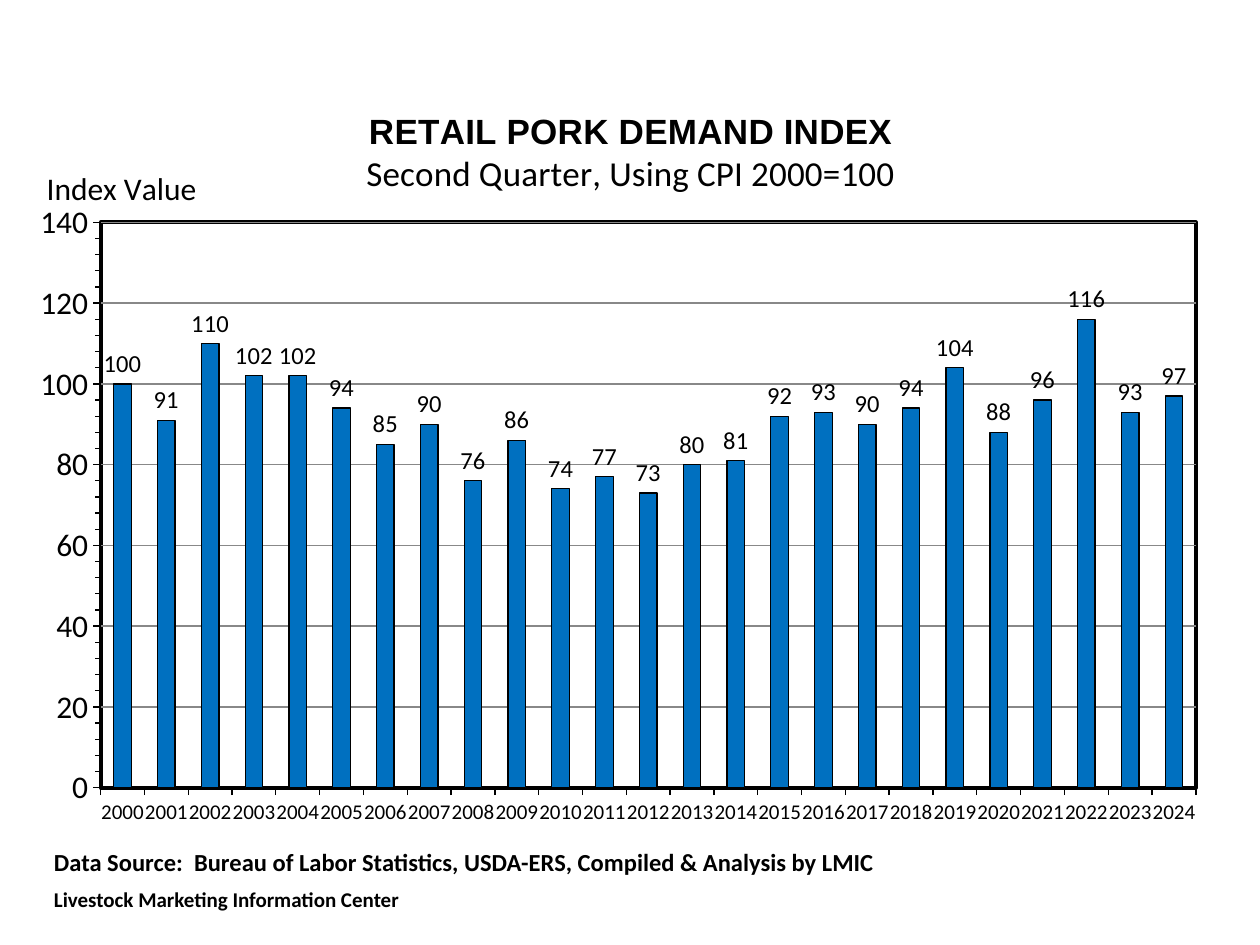
from lxml import etree
from pptx import Presentation
from pptx.chart.data import CategoryChartData
from pptx.dml.color import RGBColor
from pptx.enum.chart import XL_CHART_TYPE, XL_LABEL_POSITION, XL_TICK_MARK
from pptx.oxml import parse_xml
from pptx.oxml.ns import nsdecls, qn
from pptx.util import Inches, Pt

BLACK = RGBColor(0x00, 0x00, 0x00)
BLUE = RGBColor(0x00, 0x70, 0xC0)
GRAY = RGBColor(0x88, 0x88, 0x88)


def set_layout(element, index, **settings):
    """Give a chart part a manual layout, as fractions of the chart."""
    for old_layout in element.findall(qn("c:layout")):
        element.remove(old_layout)
    layout = etree.Element(qn("c:layout"))
    manual = etree.SubElement(layout, qn("c:manualLayout"))
    for name, value in settings.items():
        etree.SubElement(manual, qn(f"c:{name}")).set("val", str(value))
    element.insert(index, layout)


def add_run(paragraph, text, size, bold, font_name="Calibri"):
    run = paragraph.add_run()
    run.text = text
    run.font.size = Pt(size)
    run.font.bold = bold
    run.font.name = font_name
    run.font.color.rgb = BLACK


presentation = Presentation()
presentation.slide_width = Inches(10)
presentation.slide_height = Inches(7.5)
slide = presentation.slides.add_slide(presentation.slide_layouts[6])

# Demand index column chart
chart_data = CategoryChartData()
chart_data.categories = [str(year) for year in range(2000, 2025)]
chart_data.add_series("Series 1", [
    100, 91, 110, 102, 102, 94, 85, 90, 76, 86, 74, 77, 73,
    80, 81, 92, 93, 90, 94, 104, 88, 96, 116, 93, 97])
chart = slide.shapes.add_chart(
    XL_CHART_TYPE.COLUMN_CLUSTERED, Inches(0.17), Inches(0.67),
    Inches(9.67), Inches(5.92), chart_data).chart
chart.has_legend = False
chart.font.size = Pt(18)
chart.font.name = "Calibri"
chart.font.color.rgb = BLACK

# Chart title in two lines
title_frame = chart.chart_title.text_frame
add_run(title_frame.paragraphs[0], "RETAIL PORK DEMAND INDEX", 20, True, "Arial")
add_run(title_frame.add_paragraph(), "Second Quarter, Using CPI 2000=100", 20, False)
set_layout(chart.chart_title._element, 1, xMode="edge", yMode="edge", x=0.28, y=0.03)

# Columns and their value labels
plot = chart.plots[0]
plot.gap_width = 150
plot.vary_by_categories = False
series = plot.series[0]
series.format.fill.solid()
series.format.fill.fore_color.rgb = BLUE
series.format.line.color.rgb = BLACK
series.format.line.width = Pt(0.75)
labels = series.data_labels
labels.show_value = True
labels.position = XL_LABEL_POSITION.OUTSIDE_END
labels.number_format = "#,##0"
labels.number_format_is_linked = False
labels.font.size = Pt(14)
labels.font.color.rgb = BLACK

# Axes
value_axis = chart.value_axis
category_axis = chart.category_axis
for axis in (value_axis, category_axis):
    axis.major_tick_mark = XL_TICK_MARK.OUTSIDE
    axis.format.line.color.rgb = BLACK
    axis.format.line.width = Pt(0.75)
value_axis.minimum_scale = 0
value_axis.maximum_scale = 140
value_axis.major_unit = 20
value_axis.minor_unit = 4
value_axis.minor_tick_mark = XL_TICK_MARK.OUTSIDE
value_axis.major_gridlines.format.line.color.rgb = GRAY
value_axis.major_gridlines.format.line.width = Pt(0.75)

# Every year on one line
category_axis.tick_labels.font.size = Pt(12)
label_body = category_axis._element.find(qn("c:txPr")).find(qn("a:bodyPr"))
label_body.attrib.pop("rot", None)
label_skip = etree.Element(qn("c:tickLblSkip"))
label_skip.set("val", "1")
category_axis._element.find(qn("c:noMultiLvlLbl")).addprevious(label_skip)

# Horizontal value axis title above the axis
axis_title = value_axis.axis_title
add_run(axis_title.text_frame.paragraphs[0], "Index Value", 18, False)
axis_title.text_frame._txBody.find(qn("a:bodyPr")).set("rot", "0")
set_layout(axis_title._element, 1, xMode="edge", yMode="edge", x=0.016, y=0.102)

# Plot area with a heavy frame
plot_area = chart._chartSpace.chart.plotArea
set_layout(plot_area, 0, layoutTarget="inner", xMode="edge", yMode="edge",
           x=0.065, y=0.185, w=0.899, h=0.758)
plot_area.append(parse_xml(
    f'<c:spPr {nsdecls("c", "a")}>'
    '<a:solidFill><a:srgbClr val="FFFFFF"/></a:solidFill>'
    f'<a:ln w="{Pt(2.25)}"><a:solidFill><a:srgbClr val="{BLACK}"/></a:solidFill></a:ln>'
    '</c:spPr>'))

# Source note
note_frame = slide.shapes.add_textbox(
    Inches(0.33), Inches(6.67), Inches(6.91), Inches(0.64)).text_frame
note_frame.word_wrap = True
add_run(note_frame.paragraphs[0],
        "Data Source:  Bureau of Labor Statistics, USDA-ERS, "
        "Compiled & Analysis by LMIC", 14, True)
center_paragraph = note_frame.add_paragraph()
center_paragraph.space_before = Pt(6)
add_run(center_paragraph, "Livestock Marketing Information Center", 12, True)

presentation.save("out.pptx")
